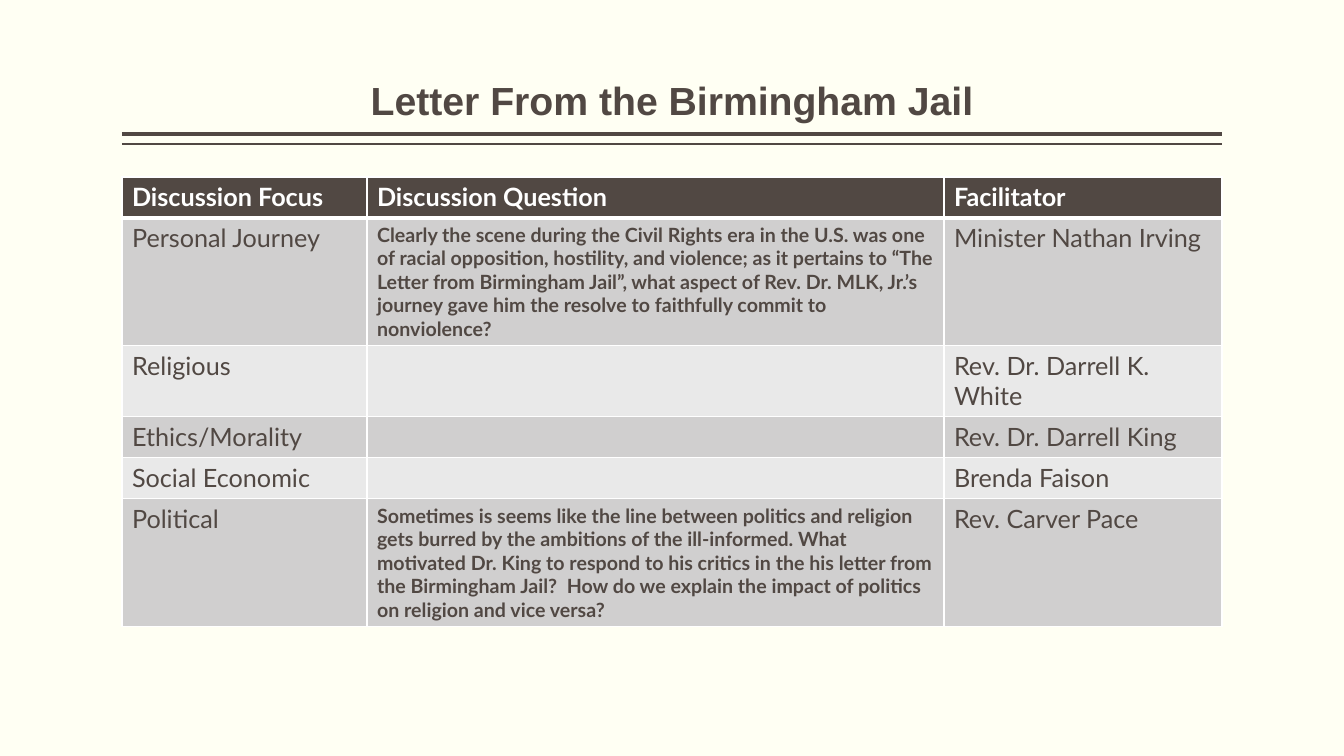
from lxml import etree
from pptx import Presentation
from pptx.dml.color import RGBColor
from pptx.enum.shapes import MSO_CONNECTOR
from pptx.enum.text import MSO_ANCHOR, MSO_AUTO_SIZE, PP_ALIGN
from pptx.oxml.ns import qn
from pptx.util import Pt

STRAIGHT = MSO_CONNECTOR.STRAIGHT
BOTTOM = MSO_ANCHOR.BOTTOM
CENTER = PP_ALIGN.CENTER
NO_AUTOFIT = MSO_AUTO_SIZE.NONE

SLIDE_W, SLIDE_H = 1344, 756
SCALE = 12192000 / SLIDE_W
LEFT, WIDTH = 122, 1100

CREAM = RGBColor(0xFF, 0xFF, 0xF3)
BROWN = RGBColor(0x51, 0x48, 0x43)
WHITE = RGBColor(0xFF, 0xFF, 0xFF)
BANDS = (RGBColor(0xD0, 0xCF, 0xCF), RGBColor(0xE9, 0xE9, 0xE9))

COLS = (245, 577, 278)
ROW_HEIGHTS = (41, 127, 71, 41, 41, 127)
ROWS = (
    ("Discussion Focus", "Discussion Question", "Facilitator"),
    ("Personal Journey",
     "Clearly the scene during the Civil Rights era in the U.S. was one of racial "
     "opposition, hostility, and violence; as it pertains to “The Letter from "
     "Birmingham Jail”, what aspect of Rev. Dr. MLK, Jr.’s journey gave him the "
     "resolve to faithfully commit to nonviolence?",
     "Minister Nathan Irving"),
    ("Religious", "", "Rev. Dr. Darrell K. White"),
    ("Ethics/Morality", "", "Rev. Dr. Darrell King"),
    ("Social Economic", "", "Brenda Faison"),
    ("Political",
     "Sometimes is seems like the line between politics and religion gets burred by "
     "the ambitions of the ill-informed. What motivated Dr. King to respond to his "
     "critics in the his letter from the Birmingham Jail?  How do we explain the "
     "impact of politics on religion and vice versa?",
     "Rev. Carver Pace"),
)


def px(n):
    return round(n * SCALE)


def add_run(p, text, font, size, color, bold):
    r = p.add_run()
    r.text = text
    r.font.name = font
    r.font.size = Pt(size)
    r.font.bold = bold
    r.font.color.rgb = color


def set_title(s, text):
    title = s.shapes.title
    title.left, title.top = px(LEFT), px(30)
    title.width, title.height = px(WIDTH), px(99)
    tf = title.text_frame
    tf.word_wrap = True
    tf.auto_size = NO_AUTOFIT
    tf.vertical_anchor = BOTTOM
    tf.margin_left = tf.margin_right = 0
    tf.margin_top = tf.margin_bottom = px(5)
    p = tf.paragraphs[0]
    p.alignment = CENTER
    p.line_spacing = 0.9
    add_run(p, text, "Arial", 28, BROWN, True)


def add_rule(s, y, weight):
    line = s.shapes.add_connector(STRAIGHT, px(LEFT), px(y), px(LEFT + WIDTH), px(y))
    line.line.color.rgb = BROWN
    line.line.width = Pt(weight)
    etree.SubElement(line._element.spPr, qn("a:effectLst"))


def set_borders(cell, top, bottom):
    tcPr = cell._tc.get_or_add_tcPr()
    for side, weight in (("L", 1), ("R", 1), ("T", top), ("B", bottom)):
        ln = etree.SubElement(tcPr, qn("a:ln" + side), w=str(Pt(weight)))
        fill = etree.SubElement(ln, qn("a:solidFill"))
        etree.SubElement(fill, qn("a:srgbClr"), val=str(WHITE))


def fill_cell(cell, text, row, col):
    header = row == 0
    question = col == 1 and not header
    set_borders(cell, 3 if row == 1 else 1, 3 if header else 1)
    cell.fill.solid()
    cell.fill.fore_color.rgb = BROWN if header else BANDS[(row - 1) % 2]
    if text:
        add_run(cell.text_frame.paragraphs[0], text, "Lato", 14 if question else 18,
                WHITE if header else BROWN, header or question)


def add_discussion_table(s):
    table = s.shapes.add_table(len(ROWS), len(COLS), px(LEFT), px(177),
                               px(WIDTH), px(sum(ROW_HEIGHTS))).table
    for column, width in zip(table.columns, COLS):
        column.width = px(width)
    for i, (height, texts) in enumerate(zip(ROW_HEIGHTS, ROWS)):
        table.rows[i].height = px(height)
        for j, text in enumerate(texts):
            fill_cell(table.cell(i, j), text, i, j)


def main():
    prs = Presentation()
    prs.slide_width, prs.slide_height = px(SLIDE_W), px(SLIDE_H)
    s = prs.slides.add_slide(prs.slide_layouts[5])
    s.background.fill.solid()
    s.background.fill.fore_color.rgb = CREAM

    # Double rule under the title
    add_rule(s, 134, 3)
    add_rule(s, 144, 1)

    # Title and discussion plan
    set_title(s, "Letter From the Birmingham Jail")
    add_discussion_table(s)

    prs.save("out.pptx")


if __name__ == "__main__":
    main()
